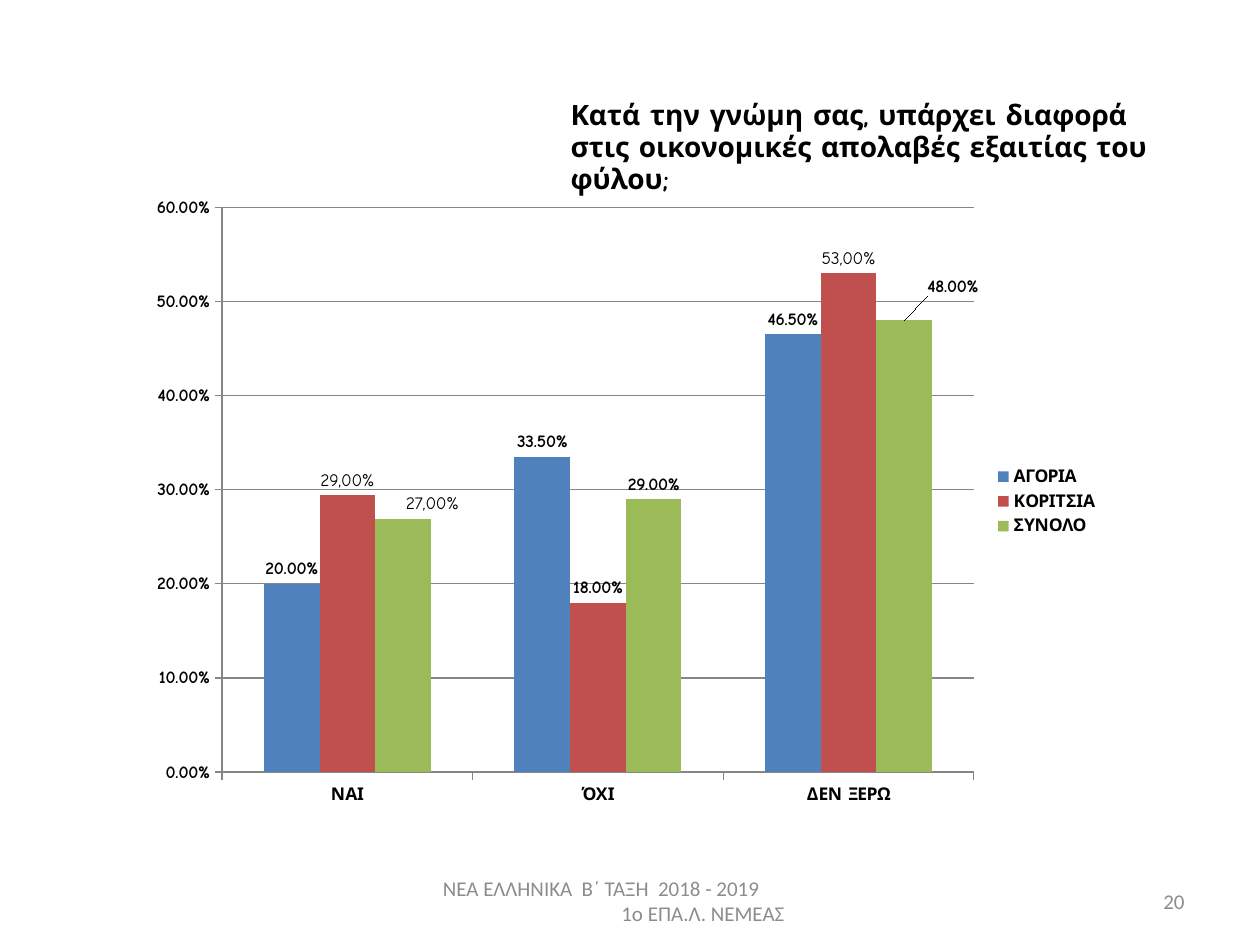
from lxml.etree import SubElement
from pptx import Presentation
from pptx.chart.data import CategoryChartData
from pptx.dml.color import RGBColor
from pptx.enum.chart import XL_CHART_TYPE as ChartType
from pptx.enum.chart import XL_LABEL_POSITION as LabelPosition
from pptx.enum.chart import XL_LEGEND_POSITION as LegendPosition
from pptx.enum.chart import XL_TICK_MARK as TickMark
from pptx.enum.text import MSO_ANCHOR as Anchor
from pptx.enum.text import PP_ALIGN as Align
from pptx.oxml import parse_xml
from pptx.oxml.ns import nsdecls, qn
from pptx.util import Pt

COLORS = {
    "text": "000000",
    "footer": "8C8C8C",
    "axis": "868686",
    "boys": "4F81BD",
    "girls": "C0504D",
    "total": "9BBB59",
}
HEADING_FONT = "Comic Neue"
PERCENT = "0.00%"


def write_text(paragraph, text, size=12, font="Calibri", color="footer",
               bold=False, align=Align.LEFT, indent=0):
    paragraph.alignment = align
    if indent:
        paragraph._p.get_or_add_pPr().set("marL", str(Pt(indent)))
    run = paragraph.add_run()
    run.text = text
    run.font.size = Pt(size)
    run.font.name = font
    run.font.bold = bold
    run.font.color.rgb = RGBColor.from_string(COLORS[color])


def set_layout(parent, index, **values):
    layout = parse_xml(f"<c:layout {nsdecls('c')}/>")
    manual = SubElement(layout, qn("c:manualLayout"))
    for name, value in values.items():
        SubElement(manual, qn(f"c:{name}")).set("val", str(value))
    parent.insert(index, layout)


presentation = Presentation()
presentation.slide_width = Pt(720)
presentation.slide_height = Pt(540)
slide = presentation.slides.add_slide(presentation.slide_layouts[6])

footer = slide.shapes.add_textbox(Pt(246), Pt(500.5), Pt(228), Pt(28.75)).text_frame
number = slide.shapes.add_textbox(Pt(516), Pt(500.5), Pt(168), Pt(28.75)).text_frame
for frame in (footer, number):
    frame.word_wrap = True
    frame.vertical_anchor = Anchor.MIDDLE
write_text(footer.paragraphs[0], "ΝΕΑ ΕΛΛΗΝΙΚΑ  Β΄ ΤΑΞΗ  2018 - 2019")
write_text(footer.add_paragraph(), "1ο ΕΠΑ.Λ. ΝΕΜΕΑΣ", indent=102)
write_text(number.paragraphs[0], "20", align=Align.RIGHT)

series_rows = [
    ("ΑΓΟΡΙΑ", (0.2, 0.335, 0.465), "boys", {}),
    ("ΚΟΡΙΤΣΙΑ", (0.294, 0.18, 0.53), "girls", {0: "29,00%", 2: "53,00%"}),
    ("ΣΥΝΟΛΟ", (0.269, 0.29, 0.48), "total", {0: "27,00%"}),
]
data = CategoryChartData(number_format=PERCENT)
data.categories = ["ΝΑΙ", "ΌΧΙ", "ΔΕΝ ΞΕΡΩ"]
for name, values, color, custom_labels in series_rows:
    data.add_series(name, values)
chart = slide.shapes.add_chart(
    ChartType.COLUMN_CLUSTERED, Pt(78.5), Pt(105.8), Pt(556.5), Pt(361.5), data
).chart
chart.has_title = False
chart.font.size = Pt(10)
chart.font.name = "Calibri"
chart.font.color.rgb = RGBColor.from_string(COLORS["text"])
chart.has_legend = True
chart.legend.position = LegendPosition.RIGHT
chart.legend.include_in_layout = False

value_axis, category_axis = chart.value_axis, chart.category_axis
value_axis.minimum_scale = 0
value_axis.maximum_scale = 0.6
value_axis.major_unit = 0.1
value_axis.tick_labels.number_format = PERCENT
value_axis.tick_labels.number_format_is_linked = False
value_axis.has_major_gridlines = True
lines = [value_axis.major_gridlines.format.line]
for axis in (value_axis, category_axis):
    axis.major_tick_mark = TickMark.OUTSIDE
    lines.append(axis.format.line)
for line in lines:
    line.color.rgb = RGBColor.from_string(COLORS["axis"])
    line.width = Pt(0.75)

plot = chart.plots[0]
plot.gap_width = 150
plot.overlap = 0
plot.vary_by_categories = False
bold_fonts = [value_axis.tick_labels.font, category_axis.tick_labels.font, chart.legend.font]
for series, (name, values, color, custom_labels) in zip(plot.series, series_rows):
    series.format.fill.solid()
    series.format.fill.fore_color.rgb = RGBColor.from_string(COLORS[color])
    labels = series.data_labels
    labels.show_value = True
    labels.number_format = PERCENT
    labels.number_format_is_linked = False
    labels.position = LabelPosition.OUTSIDE_END
    bold_fonts.append(labels.font)
    for index, text in custom_labels.items():
        label = series.points[index].data_label
        write_text(label.text_frame.paragraphs[0], text, size=10,
                   font=HEADING_FONT, color="text", align=Align.CENTER)
        label.position = LabelPosition.OUTSIDE_END

total = plot.series[2]
last_label = total.points[2].data_label
last_label.position = LabelPosition.OUTSIDE_END
bold_fonts.append(last_label.font)
for font in bold_fonts:
    font.size = Pt(10)
    font.bold = True
    font.name = HEADING_FONT
    font.color.rgb = RGBColor.from_string(COLORS["text"])

for label, (x, y) in zip(total.data_labels._element.findall(qn("c:dLbl")),
                         [(0.03, 0), (0.05, -0.03)]):
    set_layout(label, 1, x=x, y=y)

plot_area = chart._chartSpace.chart.plotArea
for layout in plot_area.findall(qn("c:layout")):
    plot_area.remove(layout)
set_layout(plot_area, 0, layoutTarget="inner", xMode="edge", yMode="edge",
           x=0.087, y=0.035, w=0.772, h=0.893)

table = slide.shapes.add_table(1, 1, Pt(326), Pt(54.7), Pt(343.5), Pt(54.7)).table
table.first_row = False
table.horz_banding = False
cell = table.cell(0, 0)
cell.fill.background()
cell.vertical_anchor = Anchor.BOTTOM
cell.margin_left = cell.margin_right = cell.margin_top = cell.margin_bottom = 0
write_text(cell.text_frame.paragraphs[0],
           "Κατά την γνώμη σας, υπάρχει διαφορά στις οικονομικές απολαβές εξαιτίας του φύλου;",
           size=16, font=HEADING_FONT, color="text", bold=True)

presentation.save("out.pptx")
